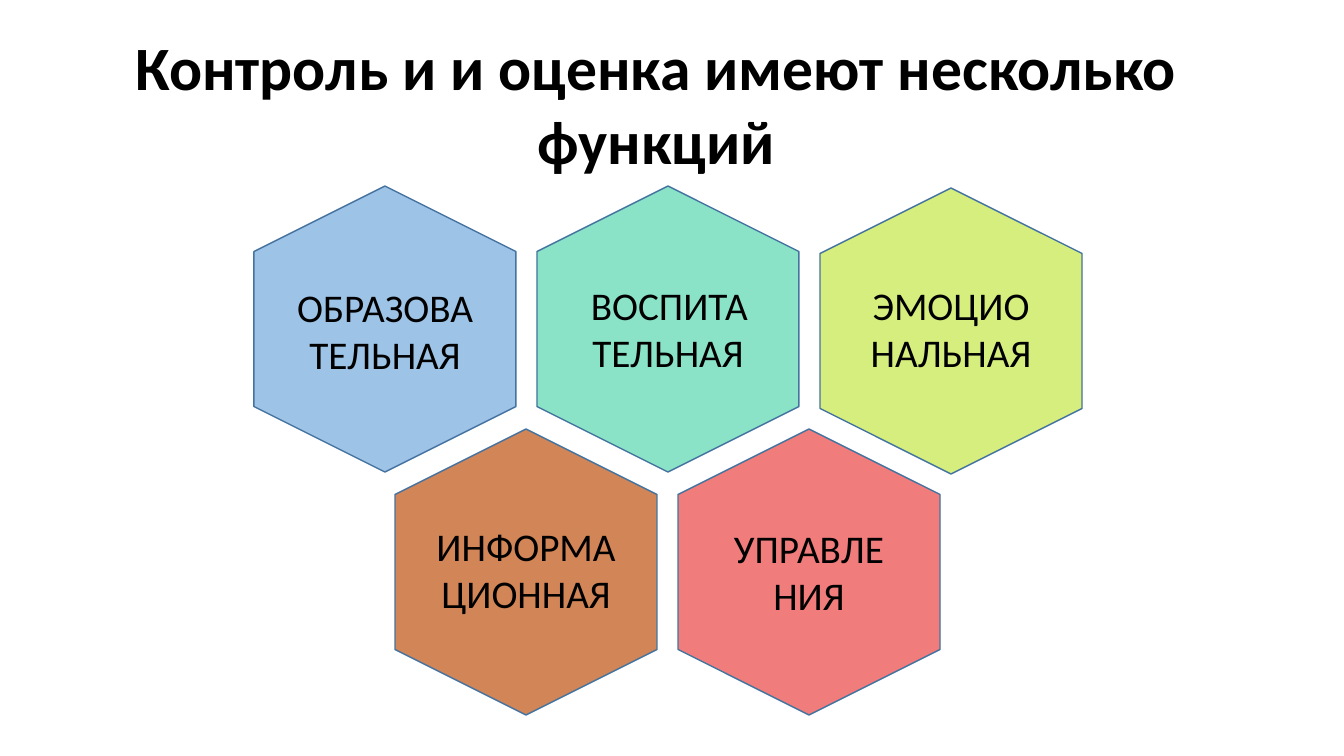
"""Slide with five hexagons naming the functions of control and assessment."""
import pptx
import pptx.dml.color
import pptx.enum.shapes
import pptx.enum.text
import pptx.util

PX = 914400 / 100.8
COLORS = {
    "text": "000000", "outline": "43739E", "blue": "9DC3E6", "mint": "8AE2C7",
    "lime": "D6EE7E", "brown": "D28556", "red": "F07C7C",
}
HEX_LENGTH, HEX_WIDTH = 286, 262
STEP = 283
LABEL_HEIGHT = 105


def box(left, top, width, height):
    return [pptx.util.Emu(round(v * PX)) for v in (left, top, width, height)]


def write(tf, text, size, bold, anchor):
    frame = {
        "word_wrap": True,
        "auto_size": pptx.enum.text.MSO_AUTO_SIZE.NONE,
        "vertical_anchor": anchor,
    }
    for name, value in frame.items():
        setattr(tf, name, value)
    p = tf.paragraphs[0]
    p.alignment = pptx.enum.text.PP_ALIGN.CENTER
    r = p.add_run()
    r.text = text
    font = {"name": "Calibri", "size": pptx.util.Pt(size), "bold": bold}
    for name, value in font.items():
        setattr(r.font, name, value)
    r.font.color.rgb = pptx.dml.color.RGBColor.from_string(COLORS["text"])


prs = pptx.Presentation()
prs.slide_width, prs.slide_height = box(0, 0, 1344, 756)[2:]
s = prs.slides.add_slide(prs.slide_layouts[5])

title = s.shapes.title
title.left, title.top, title.width, title.height = box(24, 24, 1265, 160)
write(title.text_frame, "Контроль и и оценка имеют несколько функций", 44, True,
      pptx.enum.text.MSO_ANCHOR.TOP)

rows = [
    (385, [
        ("ОБРАЗОВА ТЕЛЬНАЯ", "blue", 329, 270, 278, 210),
        ("ВОСПИТАТЕЛЬНАЯ", "mint", 329, 270, 276, 183),
        ("ЭМОЦИОНАЛЬНАЯ", "lime", 331, 90, 276, 193),
    ]),
    (526, [
        ("ИНФОРМАЦИОННАЯ", "brown", 572, 90, 517, 210),
        ("УПРАВЛЕНИЯ", "red", 572, 90, 519, 192),
    ]),
]

labels = []
for first_center, functions in rows:
    for i, (text, color, middle, rotation, top, width) in enumerate(functions):
        center = first_center + i * STEP
        sp = s.shapes.add_shape(
            pptx.enum.shapes.MSO_SHAPE.HEXAGON,
            *box(center - HEX_LENGTH / 2, middle - HEX_WIDTH / 2, HEX_LENGTH, HEX_WIDTH))
        sp.rotation = rotation
        sp.shadow.inherit = False
        sp.fill.solid()
        sp.fill.fore_color.rgb = pptx.dml.color.RGBColor.from_string(COLORS[color])
        sp.line.color.rgb = pptx.dml.color.RGBColor.from_string(COLORS["outline"])
        sp.line.width = pptx.util.Pt(1)
        labels.append((text, center - width / 2, top, width))

for text, left, top, width in labels:
    sp = s.shapes.add_textbox(*box(left, top, width, LABEL_HEIGHT))
    write(sp.text_frame, text, 28, False, pptx.enum.text.MSO_ANCHOR.TOP)

prs.save("out.pptx")
